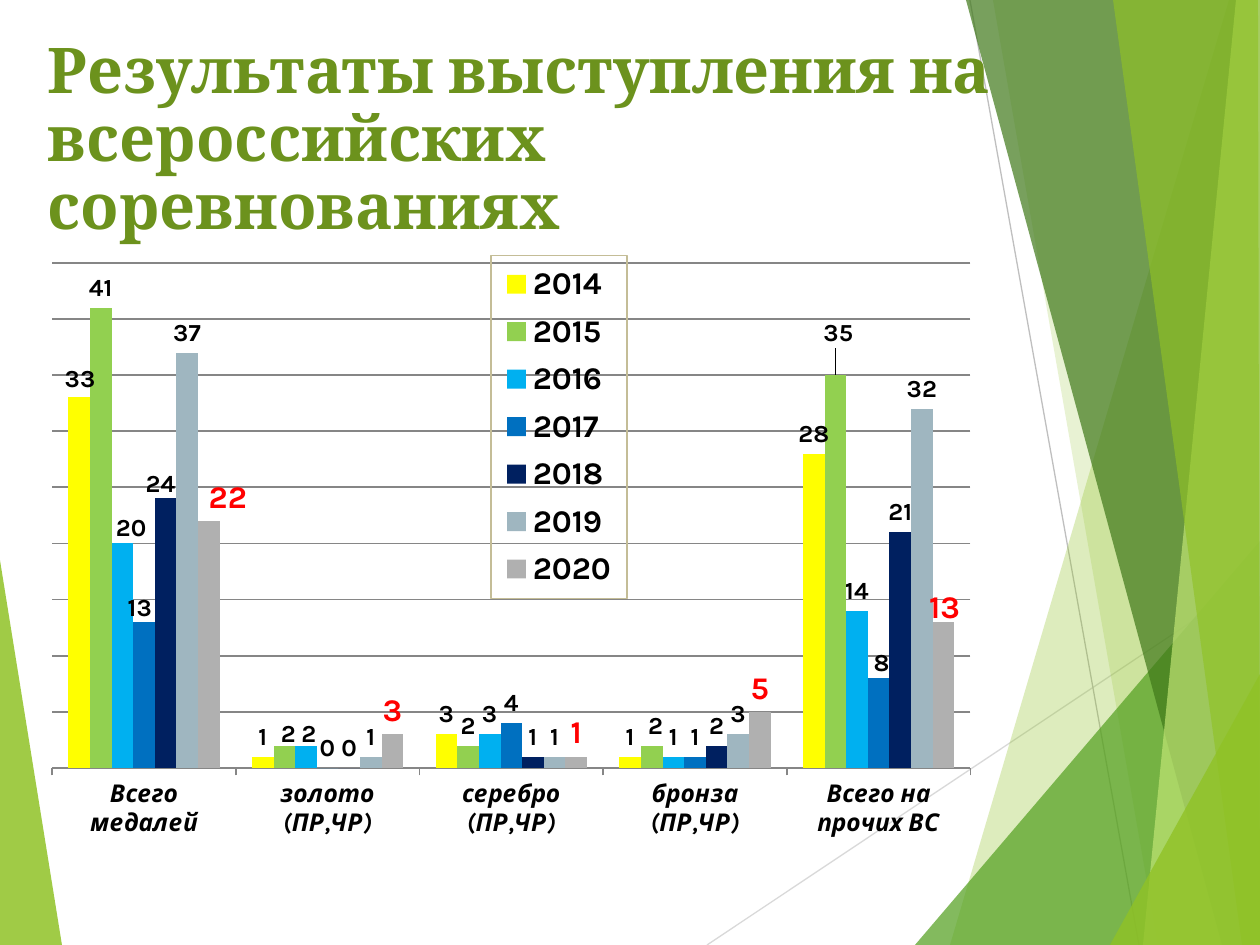
from lxml.etree import SubElement
from pptx import Presentation
from pptx.chart.data import CategoryChartData
from pptx.dml.color import RGBColor
from pptx.enum.chart import XL_CHART_TYPE, XL_LABEL_POSITION, XL_LEGEND_POSITION, XL_TICK_LABEL_POSITION, XL_TICK_MARK
from pptx.enum.shapes import MSO_CONNECTOR
from pptx.enum.text import MSO_ANCHOR
from pptx.oxml import parse_xml
from pptx.oxml.ns import nsdecls, qn
from pptx.util import Pt

PX = 914400 / 126
W, H = 1260, 945

BLACK = RGBColor(0x00, 0x00, 0x00)
RED = RGBColor(0xFF, 0x00, 0x00)
OLIVE = RGBColor(0x6C, 0x92, 0x1D)
LIME = RGBColor(0x90, 0xC2, 0x26)
GREEN = RGBColor(0x54, 0xA0, 0x21)
FOREST = RGBColor(0x3F, 0x78, 0x19)
PALE = RGBColor(0xC0, 0xE4, 0x74)
SILVER = RGBColor(0xD9, 0xD9, 0xD9)
MIST = RGBColor(0xBF, 0xBF, 0xBF)
GRID = RGBColor(0x86, 0x86, 0x86)
SAND = RGBColor(0xC4, 0xBD, 0x97)

CATEGORIES = ["Всего медалей", "золото (ПР,ЧР)", "серебро (ПР,ЧР)",
              "бронза (ПР,ЧР)", "Всего на прочих ВС"]
SERIES = [
    ("2014", (33, 1, 3, 1, 28), RGBColor(0xFF, 0xFF, 0x00), {0: (1, 2)}),
    ("2015", (41, 2, 2, 2, 35), RGBColor(0x92, 0xD0, 0x50),
     {1: (4, 8), 3: (4, 0), 4: (3, -22)}),
    ("2016", (20, 2, 3, 1, 14), RGBColor(0x00, 0xB0, 0xF0), {0: (9, 5), 1: (3, 8)}),
    ("2017", (13, 0, 4, 1, 8), RGBColor(0x00, 0x70, 0xC0), {0: (-4, 6), 4: (3, 5)}),
    ("2018", (24, 0, 1, 2, 21), RGBColor(0x00, 0x20, 0x60), {0: (-5, 6)}),
    ("2019", (37, 1, 1, 3, 32), RGBColor(0x9F, 0xB6, 0xC0), {}),
    ("2020", (22, 3, 1, 5, 13), RGBColor(0xB0, 0xB0, 0xB0), {0: (19, 0), 4: (1, 9)}),
]


def px(n):
    """Turn px into EMU."""
    return round(n * PX)


def style(font, size, color=BLACK, name="Karla", bold=True, italic=False):
    """Set the format of a font."""
    font.size, font.name, font.bold, font.italic = Pt(size), name, bold, italic
    font.color.rgb = color


def add_text(s, box, text, spacing=1.0, **fmt):
    """Add a wrapped text box."""
    tf = s.shapes.add_textbox(*map(px, box)).text_frame
    tf.word_wrap = True
    tf.vertical_anchor = MSO_ANCHOR.TOP
    p = tf.paragraphs[0]
    p.line_spacing = spacing
    r = p.add_run()
    r.text = text
    style(r.font, **fmt)


def add_facet(s, origin, points, color, alpha):
    """Add a translucent polygon with points relative to the origin."""
    x, y = origin
    pts = [(x + a, y + b) for a, b in points]
    fb = s.shapes.build_freeform(*pts[0], scale=PX)
    fb.add_line_segments(pts[1:], close=True)
    sp = fb.convert_to_shape()
    sp.shadow.inherit = False
    sp.fill.solid()
    sp.fill.fore_color.rgb = color
    sp.line.fill.background()
    clr = sp._element.spPr.find(qn("a:solidFill"))[0]
    SubElement(clr, qn("a:alpha")).set("val", str(alpha * 1000))


def add_line(s, origin, start, end, color):
    """Add a thin straight line relative to the origin."""
    x, y = origin
    ends = [x + start[0], y + start[1], x + end[0], y + end[1]]
    cxn = s.shapes.add_connector(MSO_CONNECTOR.STRAIGHT, *map(px, ends))
    cxn.line.color.rgb = color
    cxn.line.width = Pt(0.75)
    SubElement(cxn._element.spPr, qn("a:effectLst"))


def add_left_wedge(s, box):
    """Draw the green wedge at the lower left."""
    x, y, w, h = box
    add_facet(s, (x, y), [(0, 0), (w, h), (0, h)], LIME, 85)


def add_right_facets(s, box):
    """Draw the lines and overlapping facets on the right."""
    x, y, w, h = box
    o = x, y
    add_line(s, o, (0, h), (w, 576), SILVER)
    add_line(s, o, (263, 0), (432, h), MIST)
    facets = [
        ([(522, 0), (243, h), (w, h), (w, 0)], LIME, 30),
        ([(286, 0), (451, h), (w, h), (w, 0)], LIME, 20),
        ([(208, h), (w, 541), (w, h)], GREEN, 72),
        ([(259, 0), (515, h), (w, h), (w, 0)], FOREST, 70),
        ([(529, 0), (436, h), (w, h), (w, 0)], PALE, 70),
        ([(406, 0), (535, h), (w, h), (w - 2, 0)], LIME, 65),
        ([(403, h), (w, 674), (w, h)], LIME, 80),
    ]
    for points, color, alpha in facets:
        add_facet(s, o, points, color, alpha)


def manual_layout(**values):
    """Build a chart layout element from fractions and modes."""
    parts = "".join(f'<c:{k} val="{v}"/>' for k, v in values.items())
    return parse_xml(f'<c:layout {nsdecls("c")}><c:manualLayout>{parts}'
                     '</c:manualLayout></c:layout>')


def set_layout(el, layout, after=None):
    """Replace the layout of a chart part."""
    for old in el.findall(qn("c:layout")):
        el.remove(old)
    if after is None:
        el.insert(0, layout)
    else:
        el.find(qn(after)).addnext(layout)


def format_series(ser, color, shifts, fmt, box):
    """Colour a series and place its value labels."""
    ser.format.fill.solid()
    ser.format.fill.fore_color.rgb = color
    ser.invert_if_negative = False
    labels = ser.data_labels
    labels.show_value = True
    labels.position = XL_LABEL_POSITION.OUTSIDE_END
    style(labels.font, **fmt)
    for i, (dx, dy) in shifts.items():
        label = ser.points[i].data_label
        style(label.font, **fmt)
        label.position = XL_LABEL_POSITION.OUTSIDE_END
        el = ser._element.xpath(f'c:dLbls/c:dLbl[c:idx/@val="{i}"]')[0]
        set_layout(el, manual_layout(x=round(dx / box[2], 4), y=round(dy / box[3], 4)), "c:idx")


def add_medal_chart(s, box):
    """Add the medal columns by year."""
    data = CategoryChartData()
    data.categories = CATEGORIES
    for name, values, _, _ in SERIES:
        data.add_series(name, values)
    chart = s.shapes.add_chart(XL_CHART_TYPE.COLUMN_CLUSTERED, *map(px, box), data).chart
    style(chart.font, 18, bold=False)
    chart.has_title = False
    plot = chart.plots[0]
    plot.gap_width, plot.overlap, plot.vary_by_categories = 150, 0, False
    for ser, (name, _, color, shifts) in zip(plot.series, SERIES):
        fmt = dict(size=18, color=RED) if name == "2020" else dict(size=14)
        format_series(ser, color, shifts, fmt, box)

    cat, val = chart.category_axis, chart.value_axis
    style(cat.tick_labels.font, 14, italic=True)
    cat.major_tick_mark = XL_TICK_MARK.OUTSIDE
    cat.tick_label_position = XL_TICK_LABEL_POSITION.LOW
    val.minimum_scale, val.maximum_scale, val.major_unit = 0, 45, 5
    val.visible = False
    val.has_major_gridlines = True
    for line in (cat.format.line, val.major_gridlines.format.line):
        line.color.rgb = GRID
        line.width = Pt(1)

    chart.has_legend = True
    legend = chart.legend
    legend.position = XL_LEGEND_POSITION.RIGHT
    legend.include_in_layout = True
    style(legend.font, 18)
    edge = dict(xMode="edge", yMode="edge")
    set_layout(legend._element, manual_layout(**edge, x=0.47, y=0.05, w=0.12, h=0.55),
               "c:legendPos")
    legend._element.find(qn("c:overlay")).addnext(parse_xml(
        f'<c:spPr {nsdecls("c", "a")}><a:ln w="9525"><a:solidFill>'
        f'<a:srgbClr val="{SAND}"/></a:solidFill></a:ln></c:spPr>'))
    set_layout(plot._element.getparent(),
               manual_layout(layoutTarget="inner", **edge, x=0.083, y=0.062, w=0.81, h=0.81))


def main():
    """Build the slide and save it."""
    prs = Presentation()
    prs.slide_width, prs.slide_height = px(W), px(H)
    s = prs.slides.add_slide(prs.slide_layouts[6])
    add_left_wedge(s, (0, 560, 62, 385))
    add_right_facets(s, (707, 0, 553, H))
    add_text(s, (35, 33, 983, 277), "Результаты выступления на всероссийских соревнованиях",
             spacing=0.9, size=36, color=OLIVE, name="Cambria")
    add_medal_chart(s, (-42, 224, 1134, 624))
    prs.save("out.pptx")


if __name__ == "__main__":
    main()
